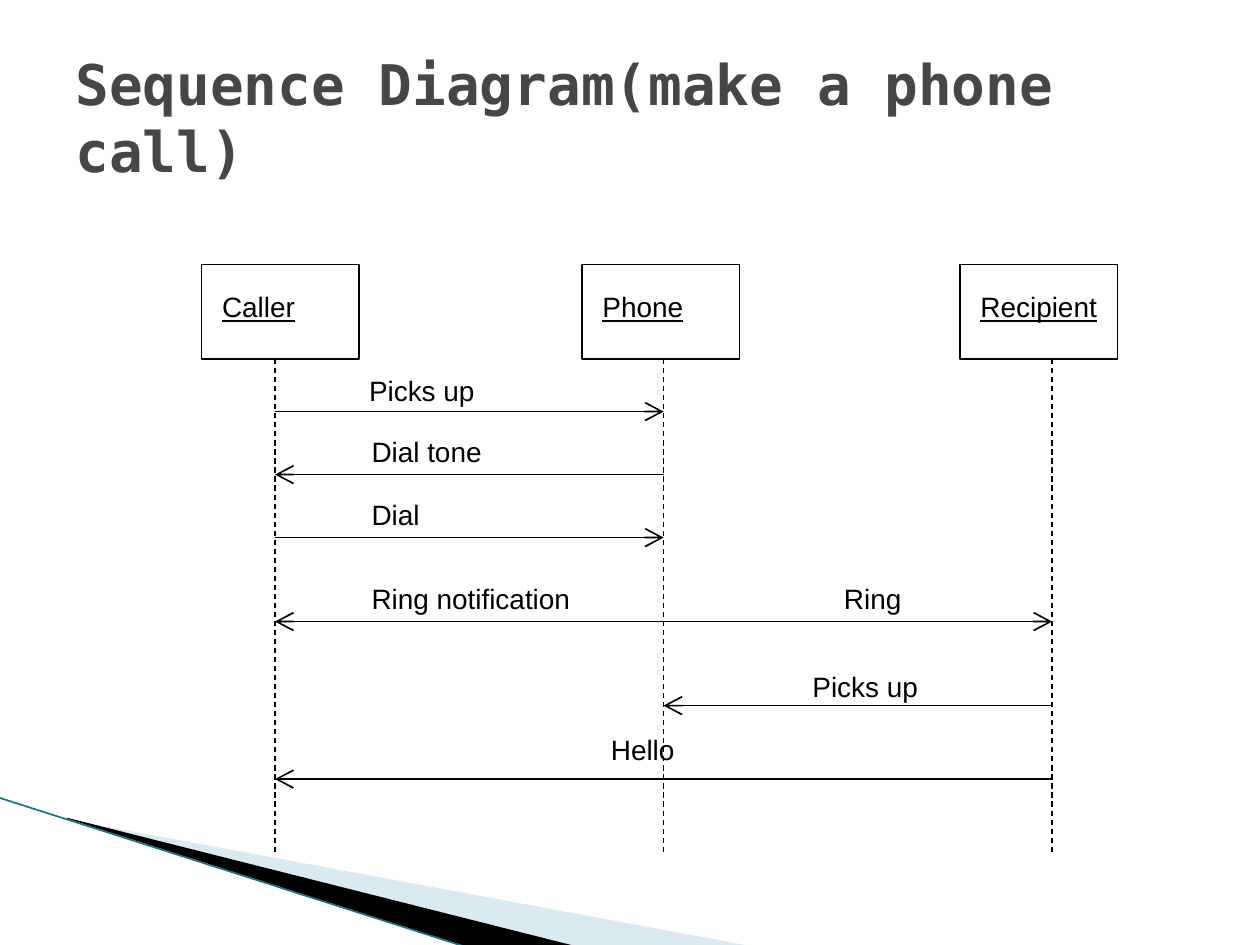
import pptx
import pptx.util
import pptx.dml.color
import pptx.enum.dml
import pptx.enum.shapes
import pptx.enum.text
import pptx.oxml
import pptx.oxml.ns
import pptx.oxml.xmlchemy
from dataclasses import dataclass

Pt = pptx.util.Pt


@dataclass(frozen=True)
class Theme:
    ink: str = "000000"
    heading: str = "464646"
    pale: str = "A0CBDC"
    edge: str = "1F6F85"
    title_font: str = "DejaVu Sans Mono"
    body_font: str = "Arial"
    title_size: float = 32
    body_size: float = 16
    thin: float = 0.75
    arrow: float = 1


def rgb(value):
    return pptx.dml.color.RGBColor.from_string(value)


def element(tag, **attributes):
    node = pptx.oxml.xmlchemy.OxmlElement(tag)
    for key, value in attributes.items():
        node.set(key, value)
    return node


class Sheet:
    def __init__(self, slide, theme):
        self.s, self.theme = slide, theme

    def text(self, text, x, y, w, h, wrap=False, anchor="TOP", **style):
        t = self.theme
        fit = pptx.enum.text.MSO_AUTO_SIZE
        sp = self.s.shapes.add_textbox(Pt(x), Pt(y), Pt(w), Pt(h))
        tf = sp.text_frame
        tf.word_wrap = wrap
        tf.auto_size = fit.NONE if wrap else fit.SHAPE_TO_FIT_TEXT
        tf.vertical_anchor = getattr(pptx.enum.text.MSO_ANCHOR, anchor)
        r = tf.paragraphs[0].add_run()
        r.text = text
        look = {"name": t.body_font, "size": Pt(t.body_size), **style}
        color = look.pop("color", t.ink)
        for key, value in look.items():
            setattr(r.font, key, value)
        r.font.color.rgb = rgb(color)

    def box(self, x, y, w, h):
        sp = self.s.shapes.add_shape(
            pptx.enum.shapes.MSO_SHAPE.RECTANGLE, Pt(x), Pt(y), Pt(w), Pt(h))
        sp.shadow.inherit = False
        sp.fill.background()
        sp.line.color.rgb = rgb(self.theme.ink)
        sp.line.width = Pt(self.theme.thin)

    def line(self, x1, y1, x2, y2, width, color=None, dashed=False, arrow=False):
        c = self.s.shapes.add_connector(
            pptx.enum.shapes.MSO_CONNECTOR.STRAIGHT, Pt(x1), Pt(y1), Pt(x2), Pt(y2))
        c.line.color.rgb = rgb(color or self.theme.ink)
        c.line.width = Pt(width)
        if dashed:
            c.line.dash_style = pptx.enum.dml.MSO_LINE.DASH
        if arrow:
            ln = c._element.spPr.find(pptx.oxml.ns.qn("a:ln"))
            ln.append(element("a:tailEnd", type="arrow", w="lg", len="lg"))
        c._element.spPr.append(element("a:effectLst"))

    def polygon(self, points, color, alpha=None):
        start, *rest = [(Pt(x), Pt(y)) for x, y in points]
        fb = self.s.shapes.build_freeform(*start)
        fb.add_line_segments(rest, close=True)
        sp = fb.convert_to_shape()
        sp.shadow.inherit = False
        sp.fill.solid()
        sp.fill.fore_color.rgb = rgb(color)
        sp.line.fill.background()
        if alpha is not None:
            fill = sp._element.spPr.find(".//" + pptx.oxml.ns.qn("a:srgbClr"))
            fill.append(element("a:alpha", val=str(alpha * 1000)))


def main():
    theme = Theme()
    prs = pptx.Presentation()
    prs.slide_width, prs.slide_height = Pt(720), Pt(540)
    sheet = Sheet(prs.slides.add_slide(prs.slide_layouts[6]), theme)

    # Corner decoration
    sheet.polygon([(39.6, 468.5), (428.4, 540.5), (328.3, 540.5), (39.6, 468)],
                  theme.pale, alpha=40)
    sheet.polygon([(38.2, 467.3), (329, 540.7), (267.8, 541.4), (38.9, 468)], theme.ink)
    sheet.line(-0.7, 455.8, 267.1, 541.4, 0.95, theme.edge)

    # Title
    sheet.text("Sequence Diagram(make a phone call)", 36, 21.6, 648, 90, wrap=True,
               anchor="MIDDLE", name=theme.title_font, size=Pt(theme.title_size),
               bold=True, color=theme.heading)

    # Participants: name, box left, name width, lifeline x
    box_top, box_w, box_h, text_h = 151.2, 90, 54, 26.6
    participants = [("Caller", 115.2, 56.2, 157.2),
                    ("Phone", 332.6, 60.5, 379.2),
                    ("Recipient", 548.6, 81, 601.2)]
    lifeline = {}
    for name, left, width, x in participants:
        lifeline[name] = x
        sheet.box(left, box_top, box_w, box_h)
        sheet.text(name, left + 4.6, box_top + 10.8, width, text_h, underline=True)
        sheet.line(x, box_top + box_h, x, 487.4, theme.thin, dashed=True)

    # Messages: sender, receiver, arrow y, label, label left, top and width
    messages = [
        ("Caller", "Phone", 235.2, "Picks up", 203.8, 210.2, 74.9),
        ("Phone", "Caller", 271.2, "Dial tone", 205.2, 244.8, 77.8),
        ("Caller", "Phone", 307.2, "Dial", 205.2, 280.8, 41.8),
        ("Phone", "Caller", 355.2, "Ring notification", 205.2, 328.8, 128.2),
        ("Phone", "Recipient", 355.2, "Ring", 475.2, 328.8, 47.5),
        ("Recipient", "Phone", 403.2, "Picks up", 457.2, 379.2, 74.9),
        ("Recipient", "Caller", 445.2, "Hello", 342, 415.2, 51),
    ]
    for sender, receiver, y, label, left, top, width in messages:
        sheet.line(lifeline[sender], y, lifeline[receiver], y, theme.arrow, arrow=True)
        sheet.text(label, left, top, width, text_h)

    prs.save("out.pptx")


if __name__ == "__main__":
    main()
